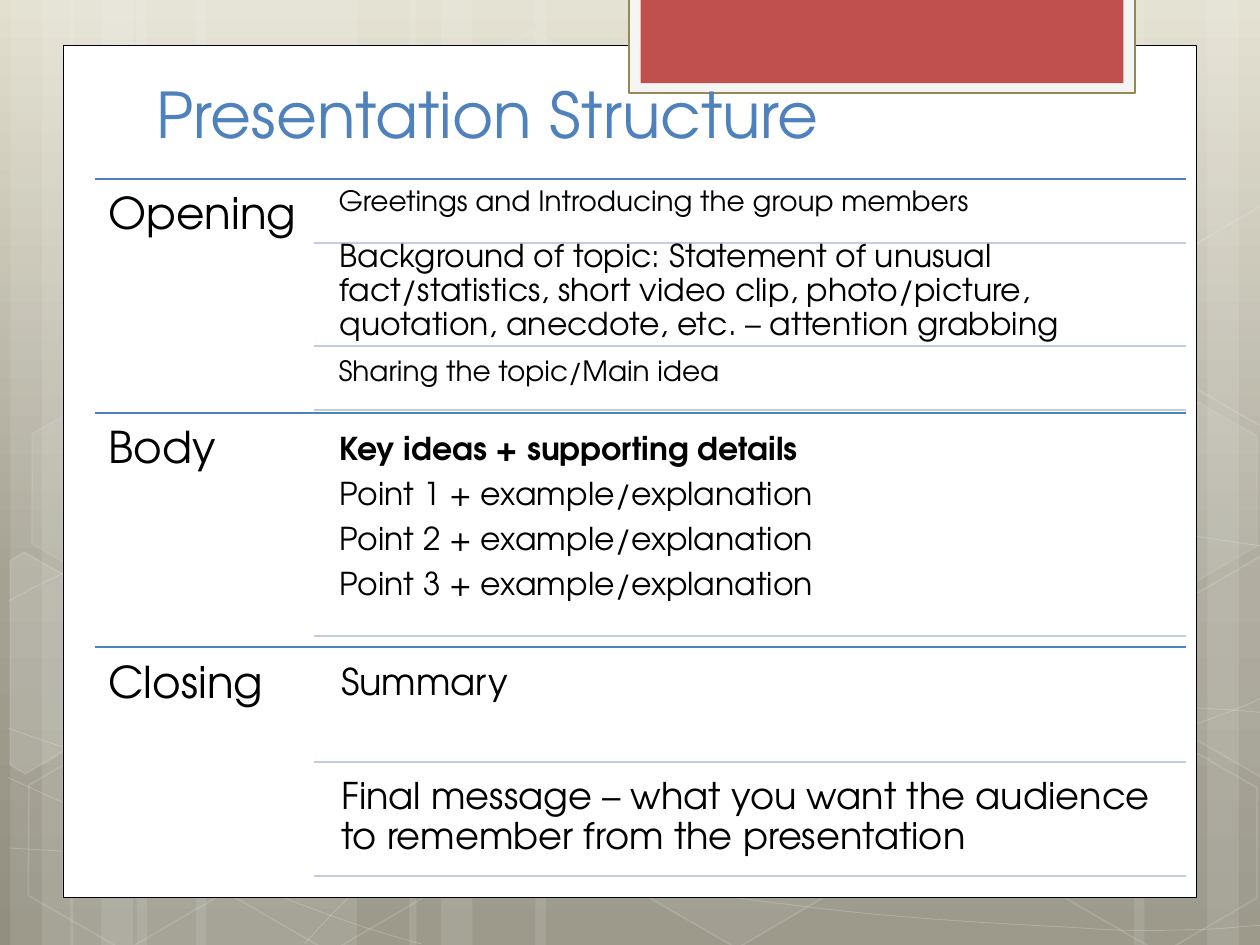
from copy import deepcopy
from math import cos, radians, sin
from pptx import Presentation
from pptx.dml import color as dml
from pptx.enum import shapes, text
from pptx.oxml import ns, xmlchemy
from pptx.util import Pt

FONT = "TeX Gyre Adventor"
WIDTH, HEIGHT = 720, 540
WHITE, BLACK, BLUE, PALE = "FFFFFF", "000000", "4F81BD", "C2CDE1"
BACKGROUND = [(0, "E2DFCF"), (0.62, "A5A293"), (1, "928F80")]
TILT = 30

# left, width
STRIPES = [(78, 126), (6, 36), (24, 60), (112, 126), (40, 36), (58, 60),
           (528, 126), (690, 36), (648, 60), (306, 222), (234, 36), (252, 60)]

# start point, then segments: six numbers for a cubic, two for a line
CURVES = [
    [(5, 484.6), (44, 487, 83, 489, 137, 488), (191, 487, 258, 486, 330, 479),
     (402, 472, 504, 458, 570, 444), (636, 431, 703, 409, 725, 396.7)],
    [(5, 343.4), (26, 332, 47, 321, 87, 310), (128, 300, 186, 284, 250, 279),
     (314, 274, 392, 273, 471, 279), (550, 284, 682, 307, 725, 312.5)],
    [(4.3, 444.2), (91.4, 483.8, 177.8, 523.4, 240.5, 539.3)],
    [(5, 416.2), (27, 424, 50, 432, 92, 443.5), (134, 454, 197, 472, 257, 484.6),
     (317, 497, 392, 510, 452, 517), (512, 525, 576, 528, 614, 530),
     (652, 532.8, 662, 531.4, 680, 531.4), (699, 531, 712, 529, 725, 528.5)],
    [(174.2, 539.3), (187, 525, 200, 510.5, 217.4, 497.5),
     (234.7, 484.6, 259.2, 470.2, 279.4, 460.1), (299.5, 450, 311.8, 445.7, 338.4, 438.5),
     (364.3, 431.3, 412.6, 421.2, 437.8, 416.2), (463.7, 411.1, 467.3, 411.1, 489.6, 409.7),
     (511.9, 407.5, 547.2, 405.4, 571.7, 404.6), (596.9, 403.9, 637.9, 404.6, 637.9, 404.6),
     (686.2, 404.6), (699.1, 405.4, 711.4, 406.1, 717.8, 406.8),
     (724.3, 407.5, 722.2, 406.8, 724.3, 407.5)],
]

# left, top, fill opacity, line opacity (percent)
HEXAGONS = [(240.5, 26, 4, 8), (357.8, 424, 6, 12), (8, 425.5, 0, 12),
            (10, 224.6, 7, 8), (125.3, 426.2, 0, 12), (542.2, 326.2, 10, 12),
            (600.5, 427, 0, 12), (600.5, 226, 7, 8)]

# frame centre, corner points as they lie on the slide, fill opacity
CUT_HEXAGONS = [
    ((25.9, 385.2), [(5.8, 320.4), (13.7, 315.4), (69.1, 347), (68.4, 410.4),
                     (14.4, 442.1), (5.8, 437)], 10),
    ((709.2, 374.4), [(666.7, 349.2), (720.7, 317.5), (726.5, 321.1), (726.5, 441.4),
                      (721.4, 444.2), (666.7, 412.6)], 4),
    ((709.2, 173.5), [(666.7, 149), (720.7, 117.4), (727.2, 121), (726.5, 241.2),
                      (721.4, 244.1), (666.7, 212.4)], 0),
]

# left, top, width, height, fill, line, line width
PANELS = [(36, 26, 648, 487, WHITE, BLACK, 0.5),
          (359.2, -1.5, 289.5, 54.6, "F5F5F5", "948A54", 1.25),
          (366, -1.5, 276, 49, "C0504D", None, 0)]

# section: rows of (text top, text height, rule below, size, paragraphs)
SECTIONS = [
    ("Opening", [
        (102.2, 34.6, 138.8, 16, ["Greetings and Introducing the group members"]),
        (131.8, 57, 197.5, 18, ["Background of topic: Statement of unusual fact/statistics, "
                                "short video clip, photo/picture, quotation, anecdote, etc. "
                                "– attention grabbing"]),
        (199.4, 34.6, 234.2, 16, ["Sharing the topic/Main idea"])]),
    ("Body", [
        (242, 121.6, 363.6, 18, ["Key ideas + supporting details"]
         + [f"Point {n} + example/explanation" for n in (1, 2, 3)])]),
    ("Closing", [
        (373, 62, 435.4, 21, ["Summary"]),
        (438.3, 62, 500.4, 21, ["Final message – what you want the audience to remember "
                                "from the presentation"])]),
]
BOLD = {"Key ideas + supporting details"}
SECTION_TOP, SECTION_HEIGHT = 102.1, 133.9
LABEL_LEFT, LABEL_WIDTH = 54.5, 124.6
RULE_LEFT, ROW_LEFT, RIGHT = 179.3, 188.7, 678


def rgb(value):
    return dml.RGBColor.from_string(value)


def paint(fill, value, opacity=100):
    if not value or not opacity:
        fill.background()
        return
    fill.solid()
    fill.fore_color.rgb = rgb(value)
    if opacity < 100:
        clr = fill._xPr.find(ns.qn("a:solidFill"))[0]
        alpha = xmlchemy.OxmlElement("a:alpha")
        alpha.set("val", str(opacity * 1000))
        clr.append(alpha)


def style(sp, fill=None, opacity=100, line=None, width=1, line_opacity=100):
    sp.shadow.inherit = False
    paint(sp.fill, fill, opacity)
    paint(sp.line.fill, line, line_opacity)
    if line:
        sp.line.width = Pt(width)


def add_shape(s, kind, *box):
    return s.shapes.add_shape(kind, *map(Pt, box))


def add_outline(s, points, close):
    corners = [(Pt(x), Pt(y)) for x, y in points]
    builder = s.shapes.build_freeform(*corners[0])
    builder.add_line_segments(corners[1:], close=close)
    return builder.convert_to_shape()


def add_curve(s, start, *segments):
    """Draw through all points, then join each cubic's three points into one segment."""
    points = [pair for seg in segments for pair in zip(seg[::2], seg[1::2])]
    sp = add_outline(s, [start] + points, False)
    lines = iter(sp._element.findall(".//" + ns.qn("a:lnTo")))
    for seg in segments:
        first = next(lines)
        if len(seg) == 6:
            cubic = xmlchemy.OxmlElement("a:cubicBezTo")
            first.addprevious(cubic)
            for ln in (first, next(lines), next(lines)):
                cubic.append(ln[0])
                ln.getparent().remove(ln)
    return sp


def turn_back(point, centre):
    """Undo the tilt of a point about the centre."""
    dx, dy = point[0] - centre[0], point[1] - centre[1]
    c, n = cos(radians(TILT)), sin(radians(TILT))
    return centre[0] + dx * c + dy * n, centre[1] - dx * n + dy * c


def add_rule(s, left, y, color):
    ln = s.shapes.add_connector(shapes.MSO_CONNECTOR.STRAIGHT,
                                Pt(left), Pt(y), Pt(RIGHT), Pt(y))
    ln.line.color.rgb = rgb(color)
    ln.line.width = Pt(1.25)
    ln._element.spPr.append(xmlchemy.OxmlElement("a:effectLst"))


def add_text(s, box, lines, size, color=BLACK):
    tf = s.shapes.add_textbox(*map(Pt, box)).text_frame
    tf.word_wrap = True
    for side in ("left", "top", "right", "bottom"):
        setattr(tf, f"margin_{side}", Pt(0.3 * size))
    for i, line in enumerate(lines):
        p = tf.paragraphs[0] if i == 0 else tf.add_paragraph()
        p.line_spacing, p.space_after = 0.9, Pt(0.35 * size)
        r = p.add_run()
        r.text = line
        for name, value in {"name": FONT, "size": Pt(size), "bold": line in BOLD}.items():
            setattr(r.font, name, value)
        r.font.color.rgb = rgb(color)
    return tf


def add_background(s):
    fill = s.background.fill
    fill.gradient()
    fill.gradient_angle = 270
    first = s._element.find(".//" + ns.qn("a:gs"))
    first.addnext(deepcopy(first))
    for stop, (position, color) in zip(fill.gradient_stops, BACKGROUND):
        stop.position = position
        stop.color.rgb = rgb(color)


def add_decoration(s):
    for left, width in STRIPES:
        style(add_shape(s, shapes.MSO_SHAPE.RECTANGLE, left, 0, width, HEIGHT), WHITE, 10)
    for curve in CURVES:
        style(add_curve(s, *curve), line=WHITE, width=0.5, line_opacity=20)
    for left, top, opacity, line_opacity in HEXAGONS:
        sp = add_shape(s, shapes.MSO_SHAPE.HEXAGON, left, top, 126, 109.4)
        sp.adjustments[0] = 0.285
        sp.rotation = TILT
        style(sp, WHITE, opacity, WHITE, 1, line_opacity)
    for centre, points, opacity in CUT_HEXAGONS:
        sp = add_outline(s, [turn_back(point, centre) for point in points], True)
        sp.rotation = TILT
        style(sp, WHITE, opacity, WHITE, 1, 12)
    for *box, fill, line, width in PANELS:
        style(add_shape(s, shapes.MSO_SHAPE.RECTANGLE, *box), fill, line=line, width=width)


def add_sections(s):
    for i, (label, rows) in enumerate(SECTIONS):
        top = SECTION_TOP + i * SECTION_HEIGHT
        add_rule(s, LABEL_LEFT, top, BLUE)
        add_text(s, (LABEL_LEFT, top, LABEL_WIDTH, SECTION_HEIGHT), [label], 25)
        for row_top, height, rule, size, lines in rows:
            add_text(s, (ROW_LEFT, row_top, RIGHT - ROW_LEFT, height), lines, size)
            add_rule(s, RULE_LEFT, rule, PALE)


def main():
    prs = Presentation()
    prs.slide_width, prs.slide_height = Pt(WIDTH), Pt(HEIGHT)
    s = prs.slides.add_slide(prs.slide_layouts[6])
    add_background(s)
    add_decoration(s)
    title = add_text(s, (82.4, 60, 553, 30), ["Presentation Structure"], 36, BLUE)
    title.vertical_anchor = text.MSO_ANCHOR.BOTTOM
    title.margin_left = title.margin_right = Pt(7.2)
    title.margin_top = title.margin_bottom = Pt(3.6)
    title.paragraphs[0].line_spacing, title.paragraphs[0].space_after = 1, Pt(0)
    add_sections(s)
    prs.save("out.pptx")


if __name__ == "__main__":
    main()
